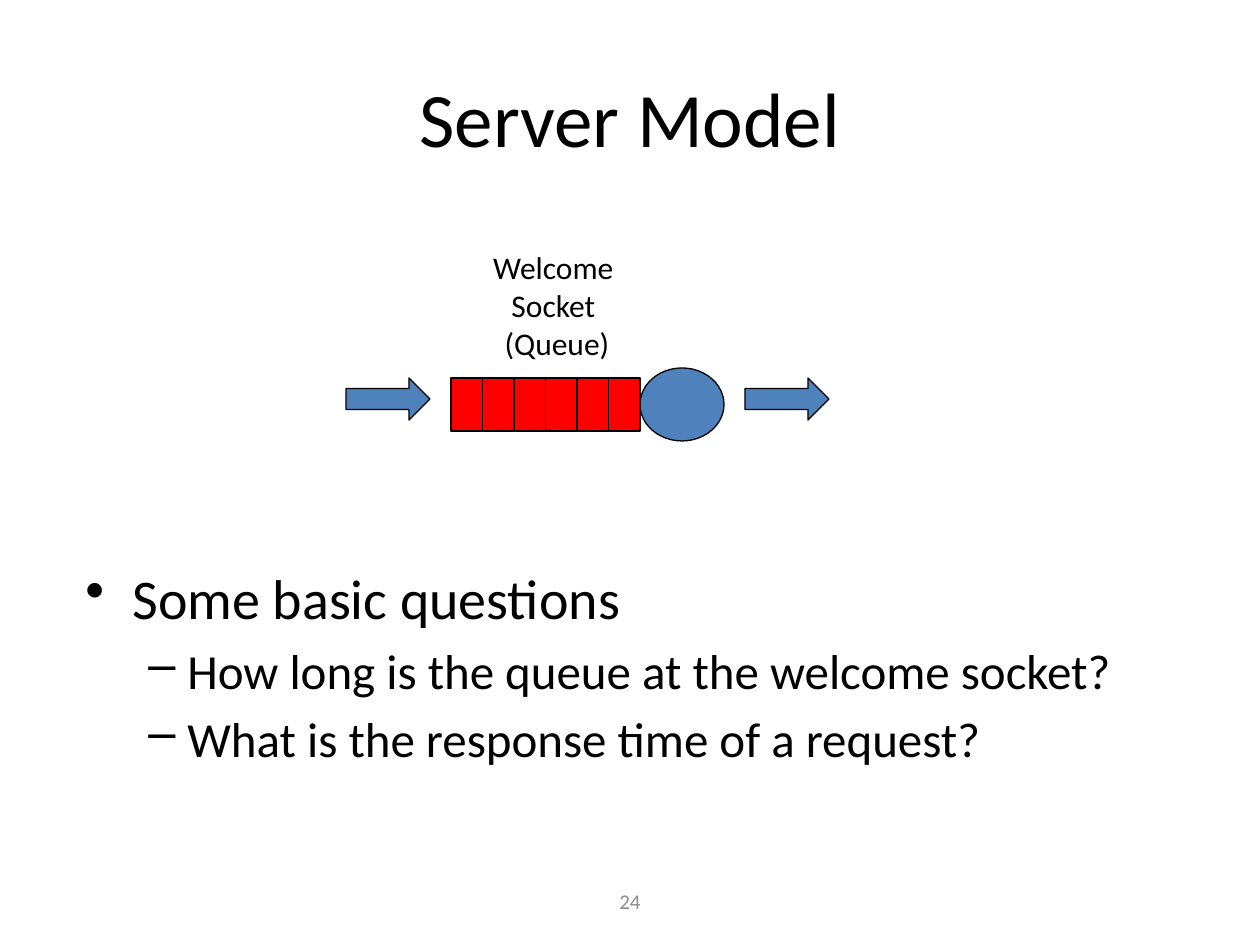
from lxml import etree
from pptx import Presentation
from pptx.dml.color import RGBColor
from pptx.enum.shapes import MSO_SHAPE
from pptx.enum.text import MSO_ANCHOR, PP_ALIGN
from pptx.oxml.ns import qn
from pptx.util import Pt

PX = 914400 / 126
FONT = "Calibri"
COLORS = {"text": "000000", "number": "8C8C8C", "line": "000000",
          "queue": "FF0000", "server": "4F81BD"}
RECT, OVAL, ARROW = MSO_SHAPE.RECTANGLE, MSO_SHAPE.OVAL, MSO_SHAPE.RIGHT_ARROW
CENTER = PP_ALIGN.CENTER
TOP, MIDDLE = MSO_ANCHOR.TOP, MSO_ANCHOR.MIDDLE
# Per level: bullet, size in points, left margin and hanging indent in px
LEVELS = [("•", 32, 47, 47), ("–", 28, 102, 39)]


def emu(px):
    return round(px * PX)


def rgb(name):
    return RGBColor.from_string(COLORS[name])


def style(p, size, color="text"):
    p.font.name = FONT
    p.font.size = Pt(size)
    p.font.color.rgb = rgb(color)


def add_box(s, x, y, w, h, anchor=TOP, wrap=True):
    tf = s.shapes.add_textbox(*map(emu, (x, y, w, h))).text_frame
    tf.word_wrap = wrap
    tf.vertical_anchor = anchor
    return tf


def add_centered(s, box, text, size, color="text", anchor=MIDDLE, wrap=True):
    p = add_box(s, *box, anchor, wrap).paragraphs[0]
    p.text = text
    p.alignment = CENTER
    style(p, size, color)


def add_outlined(s, kind, x, y, w, h, fill):
    sp = s.shapes.add_shape(kind, *map(emu, (x, y, w, h)))
    sp.shadow.inherit = False
    sp.fill.solid()
    sp.fill.fore_color.rgb = rgb(fill)
    sp.line.color.rgb = rgb("line")
    sp.line.width = Pt(0.75)


def add_server_diagram(s, x, y):
    """Arrow into a six-cell queue, the server, and an arrow out."""
    cells, cell_w = 6, 31.5
    queue_x, row_y = x + 105, y + 136
    server_x = queue_x + cells * cell_w
    add_outlined(s, OVAL, server_x, row_y - 10, 84, 73, "server")
    add_centered(s, (x + 128, y, 166, 127), "Welcome \vSocket \v(Queue)", 18,
                 anchor=TOP, wrap=False)
    for arrow_x in (x, x + 399):
        add_outlined(s, ARROW, arrow_x, row_y, 84, 42, "server")
    for i in range(cells):
        add_outlined(s, RECT, queue_x + i * cell_w, row_y, cell_w, 53, "queue")


def add_bullets(s, box, items):
    tf = add_box(s, *box)
    for i, (level, text) in enumerate(items):
        bullet, size, margin, hang = LEVELS[level]
        p = tf.add_paragraph() if i else tf.paragraphs[0]
        p.text = text
        p.level = level
        p.space_before = Pt(size * 0.2)
        style(p, size)
        pPr = p._p.get_or_add_pPr()
        pPr.set("marL", str(emu(margin)))
        pPr.set("indent", str(-emu(hang)))
        bu = etree.Element(qn("a:buChar"), char=bullet)
        pPr.find(qn("a:defRPr")).addprevious(bu)


def main():
    prs = Presentation()
    prs.slide_width, prs.slide_height = emu(1260), emu(945)
    s = prs.slides.add_slide(prs.slide_layouts[6])
    add_centered(s, (63, 38, 1134, 157), "Server Model", 44)
    add_server_diagram(s, 346, 242)
    add_bullets(s, (73, 557, 1071, 305), [
        (0, "Some basic questions"),
        (1, "How long is the queue at the welcome socket?"),
        (1, "What is the response time of a request?"),
    ])
    add_centered(s, (430, 876, 400, 50), "24", 12, "number")
    prs.save("out.pptx")


if __name__ == "__main__":
    main()
